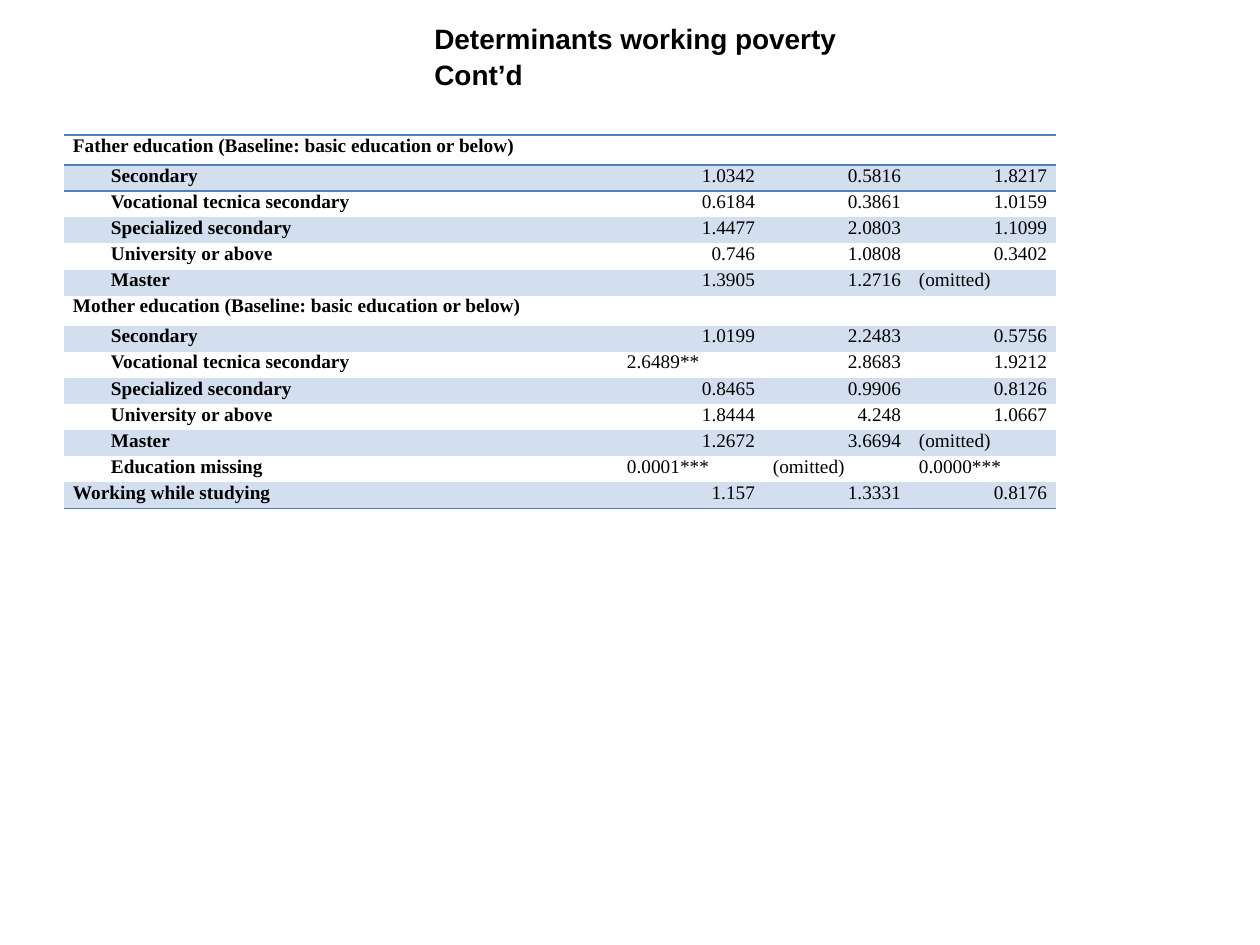
from dataclasses import dataclass

from lxml.etree import SubElement
from pptx import Presentation
from pptx.dml.color import RGBColor as Rgb
from pptx.enum.text import MSO_ANCHOR as Anchor, MSO_AUTO_SIZE as Fit, PP_ALIGN as Align
from pptx.oxml.ns import qn
from pptx.util import Emu, Pt


@dataclass(frozen=True)
class Theme:
    ink: str = "000000"
    band: str = "D3DFEE"
    rule: str = "4F81BD"
    head: str = "Arial"
    body: str = "Times New Roman"
    big: int = 16
    small: int = 11
    line: int = 1


THEME = Theme()
PLAIN = "{2D5ABB26-0587-4C30-8999-92F81FD0307C}"  # no style, no grid
TITLE = ["Determinants working poverty", "Cont’d"]
BASE = "education (Baseline: basic education or below)"
ROWS = [
    (f"Father {BASE}",),
    ("Secondary", "1.0342", "0.5816", "1.8217"),
    ("Vocational tecnica secondary", "0.6184", "0.3861", "1.0159"),
    ("Specialized secondary", "1.4477", "2.0803", "1.1099"),
    ("University or above", "0.746", "1.0808", "0.3402"),
    ("Master", "1.3905", "1.2716", "(omitted)"),
    (f"Mother {BASE}",),
    ("Secondary", "1.0199", "2.2483", "0.5756"),
    ("Vocational tecnica secondary", "2.6489**", "2.8683", "1.9212"),
    ("Specialized secondary", "0.8465", "0.9906", "0.8126"),
    ("University or above", "1.8444", "4.248", "1.0667"),
    ("Master", "1.2672", "3.6694", "(omitted)"),
    ("Education missing", "0.0001***", "(omitted)", "0.0000***"),
    ("Working while studying", "1.157", "1.3331", "0.8176"),
]


def px(n):
    return Emu(round(n * 914400 / 126))


def style(para, face, size, bold):
    font = para.font
    font.name, font.size, font.bold = face, Pt(size), bold
    font.color.rgb = Rgb.from_string(THEME.ink)


def indent(para, n):
    para._p.get_or_add_pPr().set("indent", str(px(n)))


def border(cell, *sides):
    """Rule the given sides (lnT, lnB); they must precede the fill."""
    props = cell._tc.get_or_add_tcPr()
    for side in sides:
        line = SubElement(props, qn(f"a:{side}"), w=str(Pt(THEME.line)))
        fill = SubElement(line, qn("a:solidFill"))
        SubElement(fill, qn("a:srgbClr"), val=THEME.rule)


def title(slide, x, y, w, h):
    frame = slide.shapes.add_textbox(px(x), px(y), px(w), px(h)).text_frame
    frame.word_wrap = False
    frame.auto_size = Fit.SHAPE_TO_FIT_TEXT
    frame.vertical_anchor = Anchor.MIDDLE
    frame.text = "\n".join(TITLE)
    for para in frame.paragraphs:
        style(para, THEME.head, THEME.big, True)
        para.alignment = Align.JUSTIFY
        para.line_spacing = 1.07
        indent(para, 35)


def fill_cell(cell, text, label, inset):
    cell.margin_left = cell.margin_right = px(9)
    cell.margin_top = cell.margin_bottom = 0
    para = cell.text_frame.paragraphs[0]
    para.text = text
    style(para, THEME.body, THEME.small, label)
    if inset:
        indent(para, 38)
    if not label and text.replace(".", "").isdigit():
        para.alignment = Align.RIGHT
    if not text:
        SubElement(para._p, qn("a:endParaRPr"), sz=str(THEME.small * 100))


def results(slide, x, y, w, h):
    """Place the table: group rows are taller, the others share the rest."""
    last, cols, tall, val = len(ROWS) - 1, 4, 30, 146
    frame = slide.shapes.add_table(len(ROWS), cols, px(x), px(y), px(w), px(h))
    table = frame.table
    table.first_row = table.horz_banding = False
    table._tbl.tblPr.find(qn("a:tableStyleId")).text = PLAIN
    for c, col in enumerate(table.columns):
        col.width = px(val if c else w - val * (cols - 1))
    groups = sum(len(row) == 1 for row in ROWS)
    short = (h - groups * tall) / (len(ROWS) - groups)
    for r, row in enumerate(ROWS):
        group = len(row) == 1
        table.rows[r].height = px(tall if group else short)
        for c in range(cols):
            cell = table.cell(r, c)
            text = row[c] if c < len(row) else ""
            fill_cell(cell, text, c == 0, c == 0 and not group and r < last)
            if r == 0:
                border(cell, "lnT", "lnB")
            elif r == 1:
                border(cell, "lnT")
            elif r == last:
                border(cell, "lnB")
            if r % 2:
                cell.fill.solid()
                cell.fill.fore_color.rgb = Rgb.from_string(THEME.band)
            else:
                cell.fill.background()


def main():
    deck = Presentation()
    deck.slide_width, deck.slide_height = px(1260), px(945)
    slide = deck.slides.add_slide(deck.slide_layouts[6])
    title(slide, 387, 15, 467, 81)
    results(slide, 64, 135, 992, 374)
    deck.save("out.pptx")


if __name__ == "__main__":
    main()
